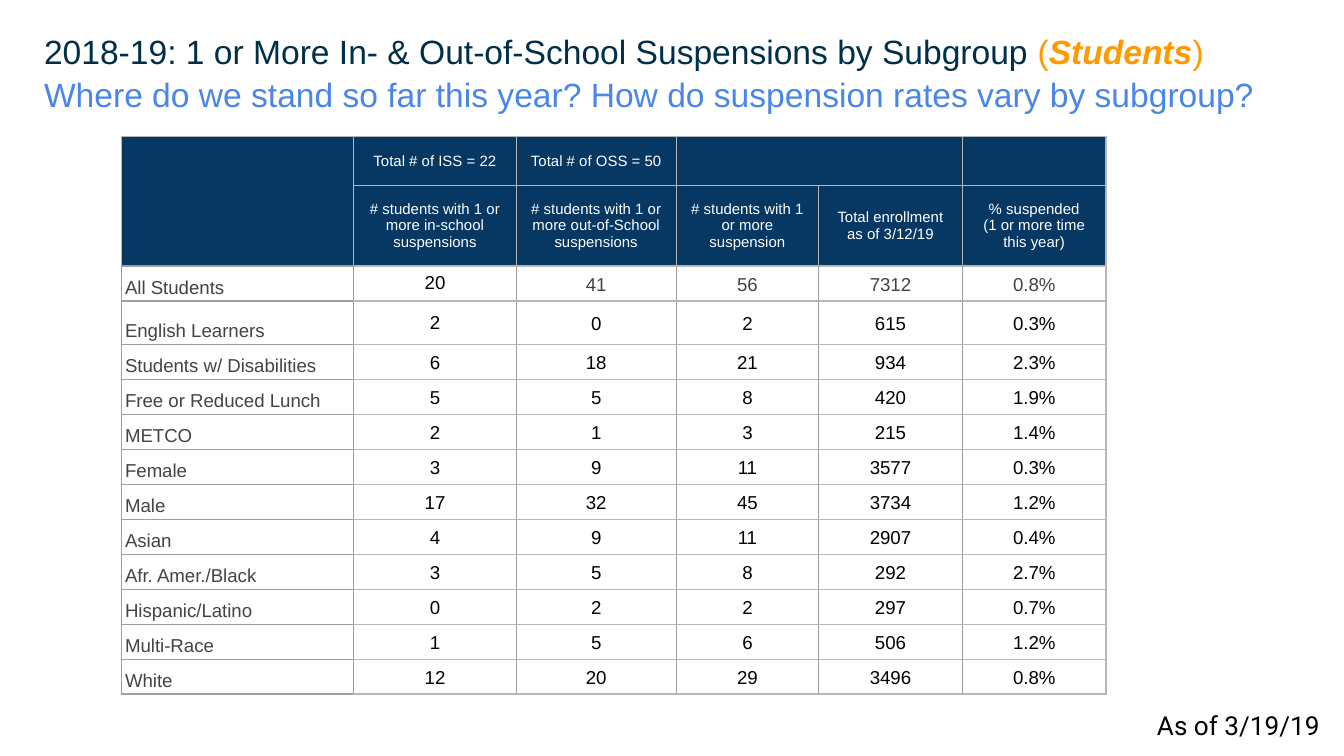
from dataclasses import dataclass

from lxml import etree
from pptx import Presentation
from pptx.dml.color import RGBColor
from pptx.enum.text import MSO_ANCHOR, PP_ALIGN
from pptx.oxml.ns import qn
from pptx.util import Pt

LEFT, CENTER = PP_ALIGN.LEFT, PP_ALIGN.CENTER
MIDDLE, BOTTOM = MSO_ANCHOR.MIDDLE, MSO_ANCHOR.BOTTOM

BLACK = RGBColor(0, 0, 0)
WHITE = RGBColor(0xFF, 0xFF, 0xFF)
NAVY = RGBColor(0x07, 0x37, 0x63)
INK = RGBColor(0x00, 0x2F, 0x4A)
ORANGE = RGBColor(0xFF, 0x99, 0x00)
BLUE = RGBColor(0x4A, 0x86, 0xE8)
GREY = RGBColor(0x43, 0x43, 0x43)
DARK = RGBColor(0x9E, 0x9E, 0x9E)
LIGHT = RGBColor(0xB7, 0xB7, 0xB7)


@dataclass
class Style:
    color: RGBColor
    size: float = 10
    align: int = CENTER
    anchor: int = MIDDLE
    space: float = 1.15
    inset: tuple = (2, 1.5)
    fill: RGBColor | None = None
    edges: tuple = (DARK, DARK, LIGHT, LIGHT)  # left, right, top, bottom


@dataclass
class Group:
    name: str
    cells: tuple
    height: float = 18.75


HEAD = Style(WHITE, 8, space=1, inset=(7.2, 7.2), fill=NAVY, edges=(LIGHT,) * 4)
BLANK = Style(WHITE, 8, space=1, fill=NAVY, edges=(LIGHT,) * 4)
LABEL = Style(GREY, align=LEFT, anchor=BOTTOM, edges=(DARK,) * 4)

WIDTHS = (124.5, 87.1, 85.7, 76.3, 77, 77)
HEIGHTS = (26.3, 43.2)
HEADS = (
    ("", "Total # of ISS = 22", "Total # of OSS = 50", "", "", ""),
    ("", "# students with 1 or more in-school suspensions",
     "# students with 1 or more out-of-School suspensions",
     "# students with 1 or more suspension",
     "Total enrollment as of 3/12/19",
     "% suspended\n(1 or more time this year)"),
)
GROUPS = (
    Group("All Students", (20, 41, 56, 7312, "0.8%")),
    Group("English Learners", (2, 0, 2, 615, "0.3%"), 23.3),
    Group("Students w/ Disabilities", (6, 18, 21, 934, "2.3%")),
    Group("Free or Reduced Lunch", (5, 5, 8, 420, "1.9%")),
    Group("METCO", (2, 1, 3, 215, "1.4%")),
    Group("Female", (3, 9, 11, 3577, "0.3%")),
    Group("Male", (17, 32, 45, 3734, "1.2%")),
    Group("Asian", (4, 9, 11, 2907, "0.4%")),
    Group("Afr. Amer./Black", (3, 5, 8, 292, "2.7%")),
    Group("Hispanic/Latino", (0, 2, 2, 297, "0.7%")),
    Group("Multi-Race", (1, 5, 6, 506, "1.2%")),
    Group("White", (12, 20, 29, 3496, "0.8%")),
)


def set_font(font, name: str, size: float, color: RGBColor) -> None:
    font.name, font.size = name, Pt(size)
    font.color.rgb = color


def add_box(slide, left: float, top: float, width: float, height: float):
    frame = slide.shapes.add_textbox(Pt(left), Pt(top), Pt(width), Pt(height)).text_frame
    frame.word_wrap = True
    frame.margin_left = frame.margin_right = Pt(7.2)
    frame.margin_top = frame.margin_bottom = Pt(7.2)
    return frame


def set_edges(cell, colors: tuple) -> None:
    props = cell._tc.get_or_add_tcPr()
    for side, color in zip("LRTB", colors):
        line = etree.SubElement(props, qn(f"a:ln{side}"), w=str(Pt(0.75)))
        fill = etree.SubElement(line, qn("a:solidFill"))
        etree.SubElement(fill, qn("a:srgbClr"), val=str(color))


def fill_cell(cell, text: str, style: Style) -> None:
    cell.text = text
    cell.vertical_anchor = style.anchor
    across, down = style.inset
    cell.margin_left = cell.margin_right = Pt(across)
    cell.margin_top = cell.margin_bottom = Pt(down)
    for para in cell.text_frame.paragraphs:
        para.alignment, para.line_spacing = style.align, style.space
        set_font(para.font, "Arial", style.size, style.color)
    # Edges must come before the fill in the cell properties
    set_edges(cell, style.edges)
    if style.fill is None:
        cell.fill.background()
    else:
        cell.fill.solid()
        cell.fill.fore_color.rgb = style.fill


def pick_style(row: int, col: int) -> Style:
    if col == 0:
        return LABEL
    style = Style(GREY if row == 0 and col > 1 else BLACK)
    if row < 2 and col == 1:
        style.space = 1
    if col == len(WIDTHS) - 1:
        style.edges = (DARK, LIGHT, LIGHT, LIGHT)
    return style


def add_grid(slide) -> None:
    heights = HEIGHTS + tuple(group.height for group in GROUPS)
    grid = slide.shapes.add_table(len(heights), len(WIDTHS), Pt(65), Pt(73),
                                  Pt(sum(WIDTHS)), Pt(sum(heights))).table
    grid.first_row = grid.horz_banding = False
    for col, width in zip(grid.columns, WIDTHS):
        col.width = Pt(width)
    for row, height in zip(grid.rows, heights):
        row.height = Pt(height)
    # Header rows
    for row, texts in enumerate(HEADS):
        for col, text in enumerate(texts):
            fill_cell(grid.cell(row, col), text, HEAD if text else BLANK)
    grid.cell(0, 0).merge(grid.cell(1, 0))
    grid.cell(0, 3).merge(grid.cell(0, 4))
    # One row for each subgroup
    for row, group in enumerate(GROUPS):
        for col, value in enumerate((group.name, *group.cells)):
            cell = grid.cell(row + len(HEADS), col)
            fill_cell(cell, str(value), pick_style(row, col))


def add_title(slide) -> None:
    frame = add_box(slide, 16.5, 8, 694, 53)
    first, second = frame.paragraphs[0], frame.add_paragraph()
    for para, color in ((first, INK), (second, BLUE)):
        para.line_spacing = 1.07
        set_font(para.font, "Arial", 18, color)
    first.add_run().text = "2018-19: 1 or More In- & Out-of-School Suspensions by Subgroup "
    for text, strong in (("(", False), ("Students", True), (")", False)):
        run = first.add_run()
        run.text = text
        run.font.color.rgb = ORANGE
        run.font.bold = run.font.italic = strong
    second.text = "Where do we stand so far this year? How do suspension rates vary by subgroup?"


def add_date(slide) -> None:
    para = add_box(slide, 612.7, 373, 107.3, 16).paragraphs[0]
    para.text = "As of 3/19/19"
    set_font(para.font, "Roboto", 14, BLACK)


def main() -> None:
    deck = Presentation()
    deck.slide_width, deck.slide_height = Pt(720), Pt(405)
    slide = deck.slides.add_slide(deck.slide_layouts[6])
    add_title(slide)
    add_grid(slide)
    add_date(slide)
    deck.save("out.pptx")


if __name__ == "__main__":
    main()
